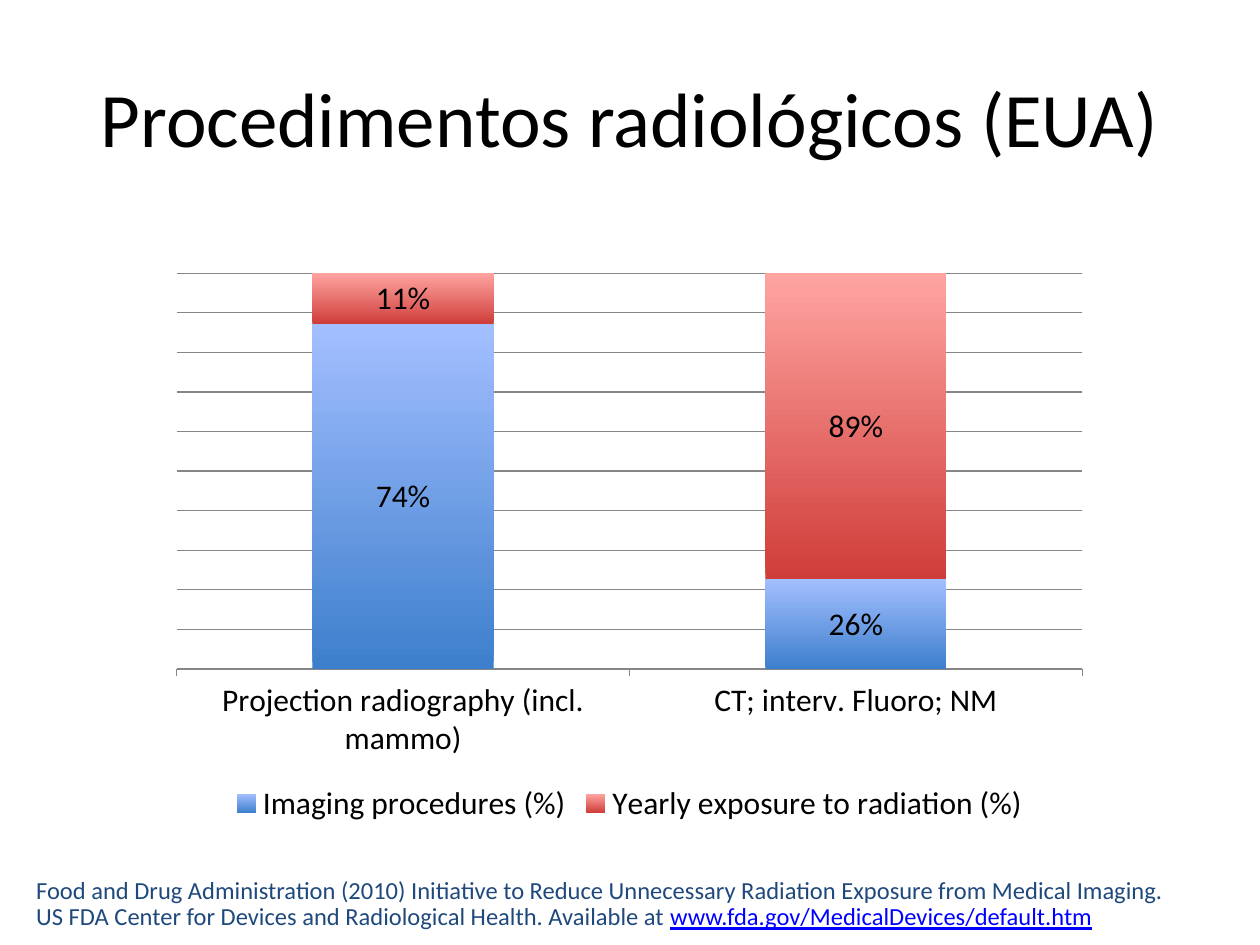
"""Build a slide comparing imaging procedures with radiation exposure in the USA."""
from dataclasses import dataclass

from pptx import Presentation
from pptx import util as u
from pptx.chart.data import CategoryChartData
from pptx.dml.color import RGBColor
from pptx.enum import chart as ch, text


@dataclass(frozen=True)
class Theme:
    font: str = "Calibri"
    ink: str = "000000"
    source: str = "1F497D"
    link: str = "0000FF"
    grid: str = "868686"
    title_size: int = 44
    chart_size: int = 18
    source_size: int = 14


THEME = Theme()
TITLE = "Procedimentos radiológicos (EUA)"
CATEGORIES = ["Projection radiography (incl. mammo)", "CT; interv. Fluoro; NM"]
SERIES = [
    {"name": "Imaging procedures (%)", "values": (0.74, 0.26), "bottom": "3D7FCC", "top": "A3BFFF"},
    {"name": "Yearly exposure to radiation (%)", "values": (0.11, 0.89), "bottom": "CF3D39", "top": "FFA4A1"},
]
SOURCE = [
    [("Food and Drug Administration (2010) Initiative to Reduce Unnecessary "
      "Radiation Exposure from Medical Imaging.", False)],
    [("US FDA Center for Devices and Radiological Health. Available at ", False),
     ("www.fda.gov/MedicalDevices/default.htm", True)],
]
TITLE_BOX = (1.27, 0.76, 22.86, 3.18)
CHART_BOX = (3.18, 5.28, 19.02, 11.43)
SOURCE_BOX = (0.48, 17.58, 23.47, 1.35)


def centimetres(box):
    return [u.Cm(length) for length in box]


def style_font(font, size, color):
    font.name = THEME.font
    font.size = u.Pt(size)
    font.color.rgb = RGBColor.from_string(color)


def add_title(slide):
    title = slide.shapes.title
    title.left, title.top, title.width, title.height = centimetres(TITLE_BOX)
    title.text_frame.vertical_anchor = text.MSO_ANCHOR.MIDDLE
    paragraph = title.text_frame.paragraphs[0]
    paragraph.alignment = text.PP_ALIGN.CENTER
    run = paragraph.add_run()
    run.text = TITLE
    style_font(run.font, THEME.title_size, THEME.ink)


def add_procedures_chart(slide):
    data = CategoryChartData(number_format="0%")
    data.categories = CATEGORIES
    for item in SERIES:
        data.add_series(item["name"], item["values"])
    chart = slide.shapes.add_chart(
        ch.XL_CHART_TYPE.COLUMN_STACKED_100, *centimetres(CHART_BOX), data).chart
    style_font(chart.font, THEME.chart_size, THEME.ink)
    chart.has_title = False
    chart.has_legend = True
    chart.legend.position = ch.XL_LEGEND_POSITION.BOTTOM
    chart.legend.include_in_layout = False

    values = chart.value_axis
    values.visible = False
    values.minimum_scale, values.maximum_scale, values.major_unit = 0, 1, 0.1
    values.has_major_gridlines = True
    values.tick_labels.number_format = "0%"
    values.tick_labels.number_format_is_linked = False
    categories = chart.category_axis
    categories.major_tick_mark = ch.XL_TICK_MARK.OUTSIDE
    for line in (values.major_gridlines.format.line, categories.format.line):
        line.color.rgb = RGBColor.from_string(THEME.grid)
        line.width = u.Pt(0.75)

    plot = chart.plots[0]
    plot.gap_width, plot.overlap, plot.vary_by_categories = 150, 100, False
    for series, item in zip(plot.series, SERIES):
        fill = series.format.fill
        fill.gradient()
        fill.gradient_angle = 90
        for stop, color in zip(fill.gradient_stops, (item["bottom"], item["top"])):
            stop.color.rgb = RGBColor.from_string(color)
        labels = series.data_labels
        labels.show_value = True
        labels.number_format = "0%"
        labels.number_format_is_linked = False
        style_font(labels.font, THEME.chart_size, THEME.ink)


def add_source(slide):
    frame = slide.shapes.add_textbox(*centimetres(SOURCE_BOX)).text_frame
    frame.word_wrap = False
    frame.auto_size = text.MSO_AUTO_SIZE.SHAPE_TO_FIT_TEXT
    for index, runs in enumerate(SOURCE):
        paragraph = frame.add_paragraph() if index else frame.paragraphs[0]
        paragraph.line_spacing = 0.9
        for words, is_link in runs:
            run = paragraph.add_run()
            run.text = words
            style_font(run.font, THEME.source_size, THEME.link if is_link else THEME.source)
            run.font.underline = is_link


def main():
    presentation = Presentation()
    presentation.slide_width, presentation.slide_height = u.Cm(25.4), u.Cm(19.05)
    slide = presentation.slides.add_slide(presentation.slide_layouts.get_by_name("Title Only"))
    add_title(slide)
    add_procedures_chart(slide)
    add_source(slide)
    presentation.save("out.pptx")


if __name__ == "__main__":
    main()
